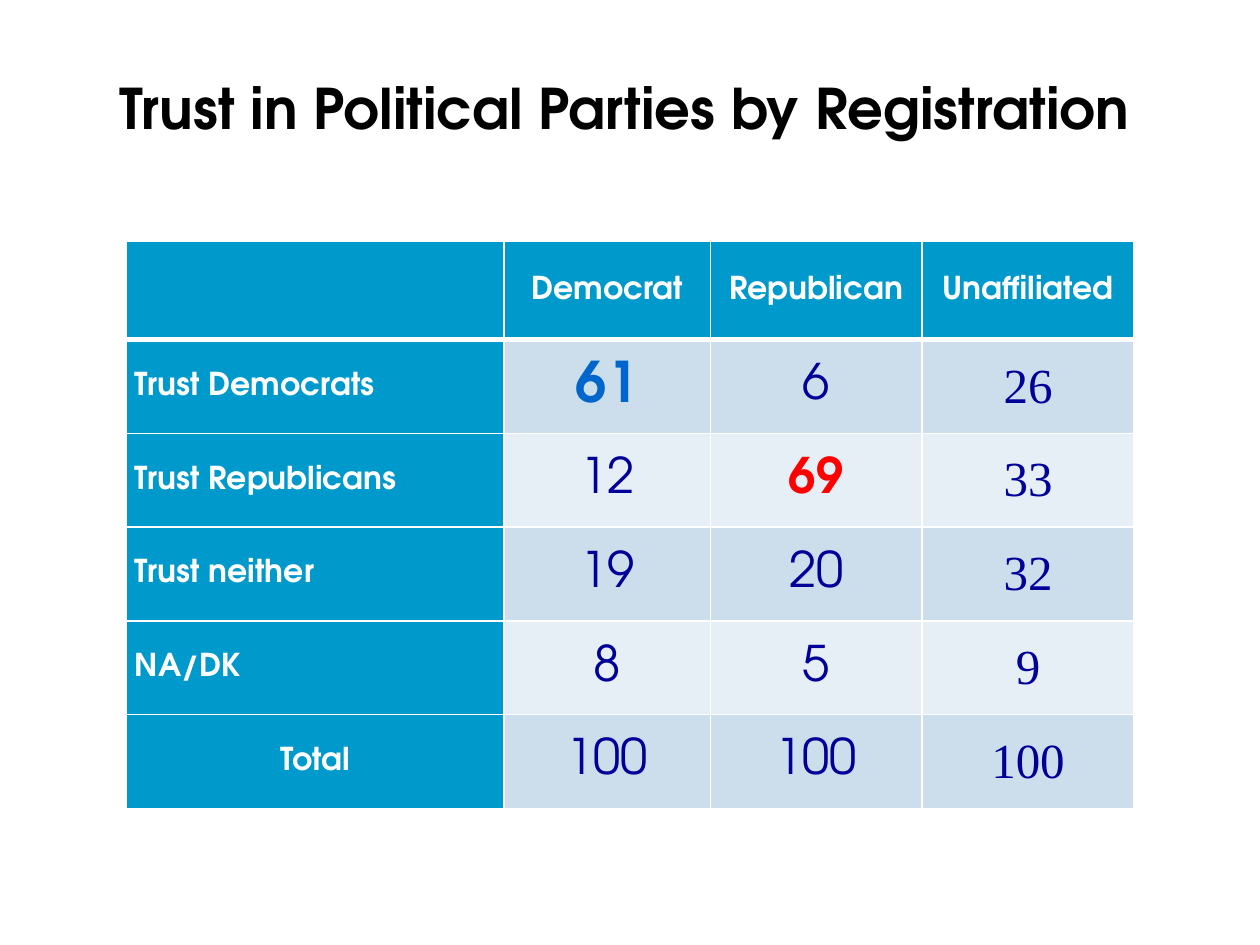
from lxml import etree
from pptx import Presentation
from pptx.dml.color import RGBColor
from pptx.enum import text
from pptx.oxml import ns
from pptx.util import Pt

TITLE = "Trust in Political Parties by Registration"
ROWS = [
    ("", "Democrat", "Republican", "Unaffiliated"),
    ("Trust Democrats", "61", "6", "26"),
    ("Trust Republicans", "12", "69", "33"),
    ("Trust neither", "19", "20", "32"),
    ("NA/DK", "8", "5", "9"),
    ("Total", "100", "100", "100"),
]
WIDTHS = [216, 118, 121, 121]
HEIGHTS = [56.2] + [53.56] * 5

BLACK = RGBColor(0, 0, 0)
WHITE = RGBColor(255, 255, 255)
TEAL = RGBColor(0x00, 0x99, 0xCC)
NAVY = RGBColor(0x00, 0x00, 0x99)
BLUE = RGBColor(0x00, 0x66, 0xCC)
RED = RGBColor(0xFF, 0x00, 0x00)
BANDS = [RGBColor(0xE7, 0xEF, 0xF6), RGBColor(0xCC, 0xDE, 0xEC)]

SANS, SERIF = "TeX Gyre Adventor", "Times New Roman"
HEAD = dict(name=SANS, size=Pt(18), bold=True, color=WHITE)
BODY = dict(name=SANS, size=Pt(28), bold=False, color=NAVY)
PEAKS = {
    (1, 1): dict(size=Pt(32), bold=True, color=BLUE),
    (2, 2): dict(bold=True, color=RED),
}
CENTER, LEFT = text.PP_ALIGN.CENTER, text.PP_ALIGN.LEFT


def write(frame, words, align, form):
    para = frame.paragraphs[0]
    para.alignment = align
    run = para.add_run()
    run.text = words
    for key, value in form.items():
        if key == "color":
            run.font.color.rgb = value
        else:
            setattr(run.font, key, value)


def border(cell, side, width):
    line = etree.SubElement(cell._tc.get_or_add_tcPr(), ns.qn("a:ln" + side),
                            w=str(Pt(width)))
    fill = etree.SubElement(line, ns.qn("a:solidFill"))
    etree.SubElement(fill, ns.qn("a:srgbClr"), val=str(WHITE))


def style(row, col):
    """Return the text format of one cell."""
    if row == 0 or col == 0:
        return HEAD
    face = SERIF if col == 3 else SANS
    return {**BODY, "name": face, **PEAKS.get((row, col), {})}


deck = Presentation()
deck.slide_width, deck.slide_height = Pt(720), Pt(540)
slide = deck.slides.add_slide(deck.slide_layouts[6])

title = slide.shapes.add_textbox(Pt(42), Pt(30), Pt(630), Pt(54)).text_frame
title.word_wrap = True
title.vertical_anchor = text.MSO_ANCHOR.BOTTOM
write(title, TITLE, CENTER, dict(name=SANS, size=Pt(32), bold=True, color=BLACK))

table = slide.shapes.add_table(len(ROWS), len(WIDTHS), Pt(72), Pt(138),
                               Pt(sum(WIDTHS)), Pt(sum(HEIGHTS))).table
for column, width in zip(table.columns, WIDTHS):
    column.width = Pt(width)
for line, height in zip(table.rows, HEIGHTS):
    line.height = Pt(height)

MARGINS = dict(margin_left=Pt(5), margin_right=Pt(5), margin_top=0, margin_bottom=0,
               vertical_anchor=text.MSO_ANCHOR.MIDDLE)
for row, words in enumerate(ROWS):
    for col, word in enumerate(words):
        cell = table.cell(row, col)
        for key, value in MARGINS.items():
            setattr(cell, key, value)
        for side in "LRTB":
            thick = (row, side) in [(0, "B"), (1, "T")]
            border(cell, side, 3 if thick else 1)
        cell.fill.solid()
        cell.fill.fore_color.rgb = TEAL if row == 0 or col == 0 else BANDS[row % 2]
        if word:
            label = col == 0 and word != "Total"
            write(cell.text_frame, word, LEFT if label else CENTER, style(row, col))

deck.save("out.pptx")
